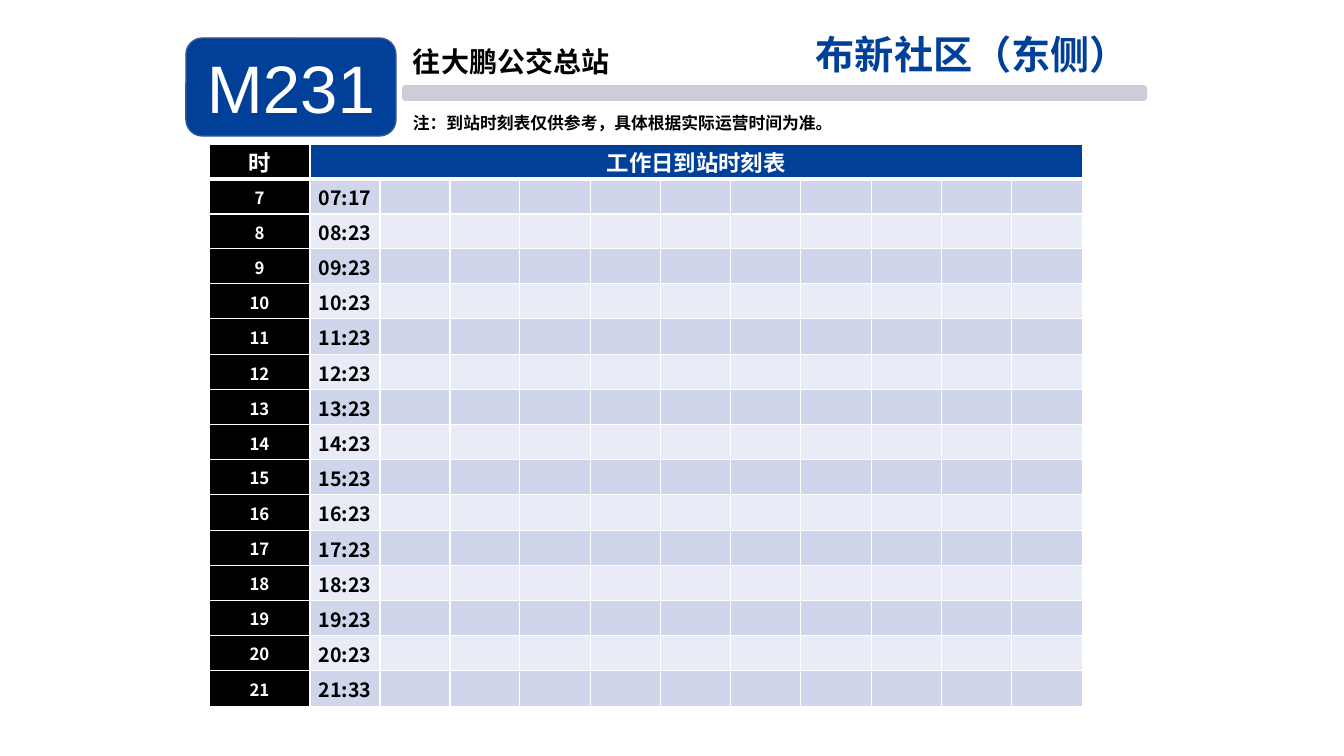
from lxml import etree
from pptx import Presentation
from pptx.dml.color import RGBColor
from pptx.enum.shapes import MSO_SHAPE
from pptx.enum.text import MSO_ANCHOR, MSO_AUTO_SIZE, PP_ALIGN
from pptx.oxml.ns import qn
from pptx.util import Emu, Pt

PX = 914400 / 100.8
COLORS = {
    "blue": "014099", "outline": "355696", "bar": "CDCDDA", "black": "000000",
    "white": "FFFFFF", "odd": "CFD6EC", "even": "E9EBF6",
}
CJK = "Noto Sans CJK SC"
HOURS = range(7, 22)
MINUTES = {7: 17, 21: 33}
USUAL_MINUTE = 23
TIME_COLS = 11


def px(n):
    return Emu(round(n * PX))


def rgb(name):
    return RGBColor.from_string(COLORS[name])


def paint(shape, fill, line=None):
    shape.shadow.inherit = False
    shape.fill.solid()
    shape.fill.fore_color.rgb = rgb(fill)
    if line:
        shape.line.color.rgb = rgb(line)
        shape.line.width = Pt(1)
    else:
        shape.line.fill.background()


def write(tf, text, size, color, font=CJK, bold=True, align=PP_ALIGN.LEFT, before=0):
    p = tf.paragraphs[0]
    p.alignment = align
    p.space_before = Pt(before)
    r = p.add_run()
    r.text = text
    r.font.size = Pt(size)
    r.font.bold = bold
    r.font.name = font
    r.font.color.rgb = rgb(color)
    etree.SubElement(r._r.get_or_add_rPr(), qn("a:ea"), typeface=CJK)


def add_title(s, text, x, y, w, h):
    title = s.shapes.title
    title.left, title.top, title.width, title.height = map(px, (x, y, w, h))
    tf = title.text_frame
    tf.word_wrap = True
    tf.auto_size = MSO_AUTO_SIZE.NONE
    tf.vertical_anchor = MSO_ANCHOR.TOP
    write(tf, text, 28, "blue", font="Arial", align=PP_ALIGN.RIGHT)


def add_bar(s, x, y, w, h):
    """Draw a bar with slightly rounded corners."""
    corner = [(0, 3), (1, 1), (3, 0)]
    left_top = [(x + dx, y + dy) for dx, dy in corner]
    right_top = [(x + w - dx, y + dy) for dx, dy in reversed(corner)]
    top = left_top + right_top
    bottom = [(cx, 2 * y + h - cy) for cx, cy in reversed(top)]
    points = top + bottom
    builder = s.shapes.build_freeform(*points[0], scale=PX)
    builder.add_line_segments(points[1:], close=True)
    paint(builder.convert_to_shape(), "bar")


def add_badge(s, text, x, y, w, h):
    sp = s.shapes.add_shape(MSO_SHAPE.ROUNDED_RECTANGLE, *map(px, (x, y, w, h)))
    paint(sp, "blue", "outline")
    sp.text_frame.vertical_anchor = MSO_ANCHOR.MIDDLE
    write(sp.text_frame, text, 48, "white", font="Arial", bold=False,
          align=PP_ALIGN.CENTER)


def add_label(s, text, x, y, w, h, size):
    tf = s.shapes.add_textbox(*map(px, (x, y, w, h))).text_frame
    tf.word_wrap = True
    tf.auto_size = MSO_AUTO_SIZE.SHAPE_TO_FIT_TEXT
    tf.margin_left = tf.margin_top = px(1)
    tf.margin_right = tf.margin_bottom = 0
    write(tf, text, size, "black", before=1)


def set_borders(cell, **widths):
    tc_pr = cell._tc.get_or_add_tcPr()
    for side in "LRTB":
        width = Pt(widths.get(side, 1))
        ln = etree.SubElement(tc_pr, qn(f"a:ln{side}"), w=str(width))
        fill = etree.SubElement(ln, qn("a:solidFill"))
        etree.SubElement(fill, qn("a:srgbClr"), val=COLORS["white"])


def format_cell(cell, fill, **borders):
    set_borders(cell, **borders)
    cell.fill.solid()
    cell.fill.fore_color.rgb = rgb(fill)
    cell.vertical_anchor = MSO_ANCHOR.MIDDLE
    cell.margin_left = cell.margin_right = cell.margin_top = px(1)
    cell.margin_bottom = 0


def split(total, count):
    """Share a length among whole-pixel parts that differ by at most one."""
    edges = [total * i // count for i in range(count + 1)]
    return [b - a for a, b in zip(edges, edges[1:])]


def add_timetable(s, x, y, w, h, hour_w):
    rows = len(HOURS) + 1
    frame = s.shapes.add_table(rows, TIME_COLS + 1, *map(px, (x, y, w, h)))
    table = frame.table
    for col, width in zip(table.columns, [hour_w] + split(w - hour_w, TIME_COLS)):
        col.width = px(width)
    for row, height in zip(table.rows, split(h, rows)):
        row.height = px(height)

    for i in range(rows):
        band = "blue" if i == 0 else "odd" if i % 2 else "even"
        borders = {0: {"B": 3}, 1: {"T": 3}}.get(i, {})
        for j in range(TIME_COLS + 1):
            format_cell(table.cell(i, j), band if j else "black", **borders)
    table.cell(0, 1).merge(table.cell(0, TIME_COLS))

    def put(i, j, text, size, color):
        write(table.cell(i, j).text_frame, text, size, color, align=PP_ALIGN.CENTER)

    put(0, 0, "时", 16, "white")
    put(0, 1, "工作日到站时刻表", 16, "white")
    for i, hour in enumerate(HOURS, 1):
        put(i, 0, str(hour), 12, "white")
        put(i, 1, f"{hour:02}:{MINUTES.get(hour, USUAL_MINUTE)}", 14, "black")


def main():
    prs = Presentation()
    prs.slide_width, prs.slide_height = px(1344), px(756)
    s = prs.slides.add_slide(prs.slide_layouts[5])
    add_bar(s, 402, 85, 745, 16)
    add_badge(s, "M231", 186, 38, 210, 98)
    add_label(s, "往大鹏公交总站", 412, 44, 346, 35, 20)
    add_label(s, "注：到站时刻表仅供参考，具体根据实际运营时间为准。", 412, 112, 422, 22, 12)
    add_title(s, "布新社区（东侧）", 781, 25, 358, 55)
    add_timetable(s, 209, 144, 874, 563, 101)
    prs.save("out.pptx")


if __name__ == "__main__":
    main()
